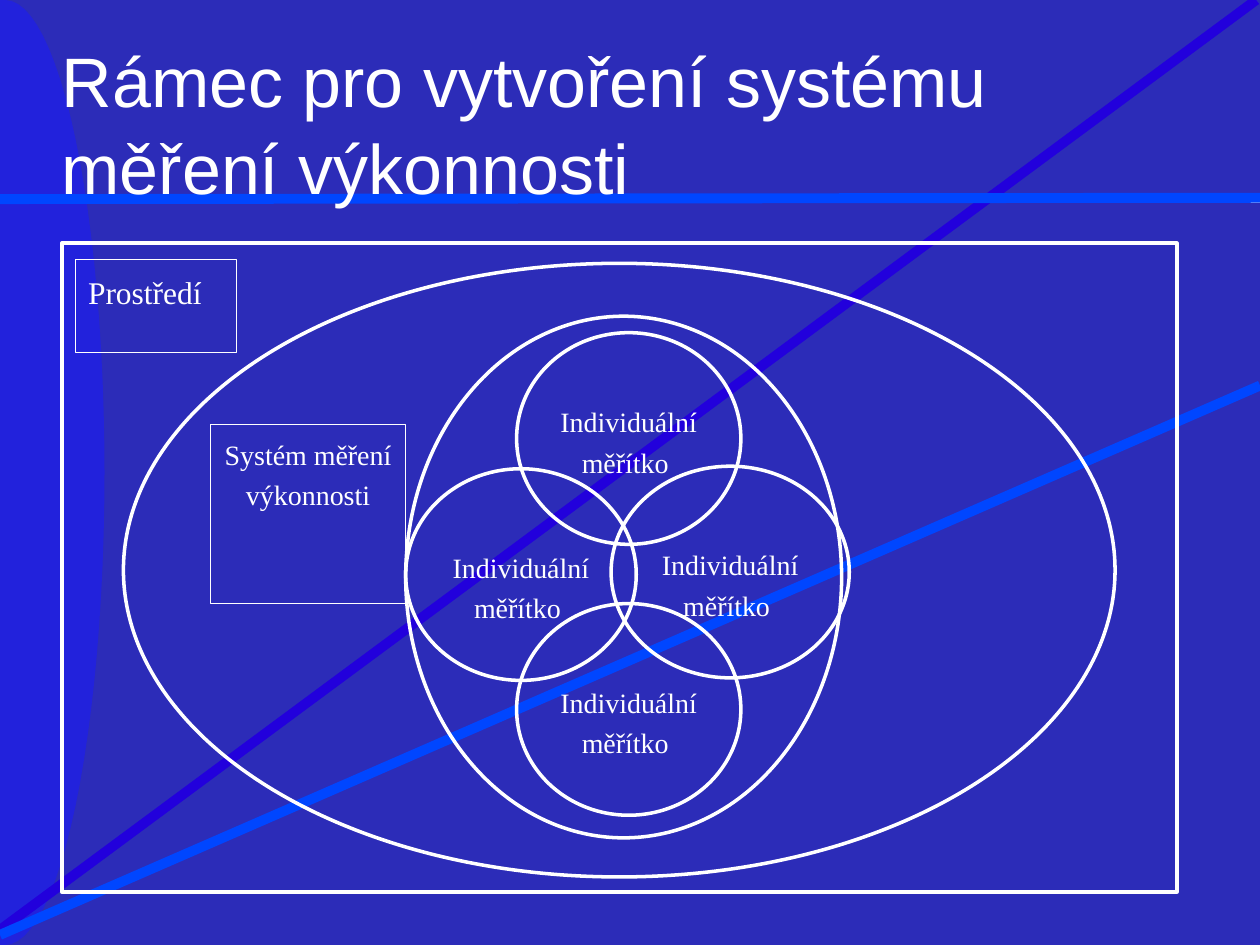
import math

import pptx
import pptx.dml.color
import pptx.enum.shapes
import pptx.enum.text
import pptx.util
from lxml import etree

Inches, Pt = pptx.util.Inches, pptx.util.Pt
RGBColor = pptx.dml.color.RGBColor
MSO_SHAPE = pptx.enum.shapes.MSO_SHAPE
PP_ALIGN = pptx.enum.text.PP_ALIGN
MSO_ANCHOR = pptx.enum.text.MSO_ANCHOR

WHITE = RGBColor(0xFF, 0xFF, 0xFF)
PANEL = RGBColor(0x2C, 0x2C, 0xB8)
BULGE = RGBColor(0x22, 0x22, 0xDC)
VIOLET = RGBColor(0x22, 0x00, 0xDC)
AZURE = RGBColor(0x00, 0x46, 0xFF)

SLIDE_W, SLIDE_H = 10, 7.5


def add_filled(sp, color):
    sp.shadow.inherit = False
    sp.fill.solid()
    sp.fill.fore_color.rgb = color
    sp.line.fill.background()


def add_stripe(slide, x1, y1, x2, y2, color):
    line = slide.shapes.add_connector(
        pptx.enum.shapes.MSO_CONNECTOR.STRAIGHT,
        Inches(x1), Inches(y1), Inches(x2), Inches(y2))
    line.line.color.rgb = color
    line.line.width = Pt(5.67)
    etree.SubElement(line._element.spPr, pptx.oxml.ns.qn("a:effectLst"))


def add_backdrop(slide):
    for top, height in ((0, 1.54), (1.61, 5.89)):
        panel = slide.shapes.add_shape(
            MSO_SHAPE.RECTANGLE, 0, Inches(top), Inches(SLIDE_W), Inches(height))
        add_filled(panel, PANEL)

    steps = 48
    angles = [math.pi * i / steps for i in range(steps + 1)]
    arc = [(Inches(0.04 + 0.79 * math.sin(a)),
            Inches(SLIDE_H / 2 * (1 - math.cos(a)))) for a in angles]
    builder = slide.shapes.build_freeform(0, 0, scale=1.0)
    builder.add_line_segments(arc + [(0, Inches(SLIDE_H))], close=True)
    add_filled(builder.convert_to_shape(), BULGE)

    add_stripe(slide, 9.97, 0, 0, 7.38, VIOLET)
    add_stripe(slide, 10, 1.57, 0, 1.58, AZURE)
    add_stripe(slide, 10, 3.06, 0, 7.42, AZURE)


def add_title(slide, left, top, width, height):
    box = slide.shapes.add_textbox(
        Inches(left), Inches(top), Inches(width), Inches(height))
    tf = box.text_frame
    tf.word_wrap = True
    tf.vertical_anchor = MSO_ANCHOR.MIDDLE
    tf.margin_left = tf.margin_right = tf.margin_top = tf.margin_bottom = 0
    p = tf.paragraphs[0]
    p.text = "Rámec pro vytvoření systému měření výkonnosti"
    p.line_spacing = 1.04
    p.font.name = "Arial"
    p.font.size = Pt(40)
    p.font.color.rgb = WHITE


def add_outline(slide, kind, box, weight=2):
    sp = slide.shapes.add_shape(kind, *(Inches(v) for v in box))
    sp.shadow.inherit = False
    sp.fill.background()
    sp.line.color.rgb = WHITE
    sp.line.width = Pt(weight)
    return sp


def set_label(sp, text, size=16, align=PP_ALIGN.CENTER, anchor=MSO_ANCHOR.TOP):
    tf = sp.text_frame
    tf.word_wrap = True
    tf.vertical_anchor = anchor
    p = tf.paragraphs[0]
    p.text = text
    p.alignment = align
    p.line_spacing = 1.2
    p.font.name = "Times New Roman"
    p.font.size = Pt(size)
    p.font.color.rgb = WHITE


def add_measure(slide, box, top_inset):
    sp = add_outline(slide, MSO_SHAPE.OVAL, box)
    set_label(sp, "Individuální měřítko ", anchor=MSO_ANCHOR.MIDDLE)
    tf = sp.text_frame
    tf.margin_left = tf.margin_right = Inches(0.08)
    tf.margin_top = Inches(top_inset)
    tf.margin_bottom = Inches(0.05)


def add_framework(slide, left, top, width, height):
    """Nested outlines: environment, measurement system, four measures."""
    def inside(dx, dy, w, h):
        return left + dx, top + dy, w, h

    system = add_outline(
        slide, MSO_SHAPE.RECTANGLE, inside(1.18, 1.44, 1.55, 1.42), 0.5)
    set_label(system, "Systém měření výkonnosti")

    for dx, dy, w, top_inset in ((2.73, 1.79, 1.83, 0.2), (3.61, 0.71, 1.78, 0.05),
                                 (4.36, 1.77, 1.89, 0.2), (3.61, 2.86, 1.78, 0.2)):
        add_measure(slide, inside(dx, dy, w, 1.68), top_inset)

    add_outline(slide, MSO_SHAPE.OVAL, inside(2.73, 0.58, 3.46, 4.14))
    add_outline(slide, MSO_SHAPE.OVAL, inside(0.49, 0.16, 7.87, 4.87))
    add_outline(slide, MSO_SHAPE.RECTANGLE, (left, top, width, height))

    environment = add_outline(
        slide, MSO_SHAPE.RECTANGLE, inside(0.11, 0.13, 1.28, 0.74), 0.5)
    set_label(environment, "Prostředí", size=18, align=PP_ALIGN.LEFT)


def main():
    prs = pptx.Presentation()
    prs.slide_width, prs.slide_height = Inches(SLIDE_W), Inches(SLIDE_H)
    slide = prs.slides.add_slide(prs.slide_layouts[6])
    add_backdrop(slide)
    add_title(slide, 0.49, 0.29, 9.03, 1.35)
    add_framework(slide, 0.49, 1.93, 8.85, 5.15)
    prs.save("out.pptx")


if __name__ == "__main__":
    main()
